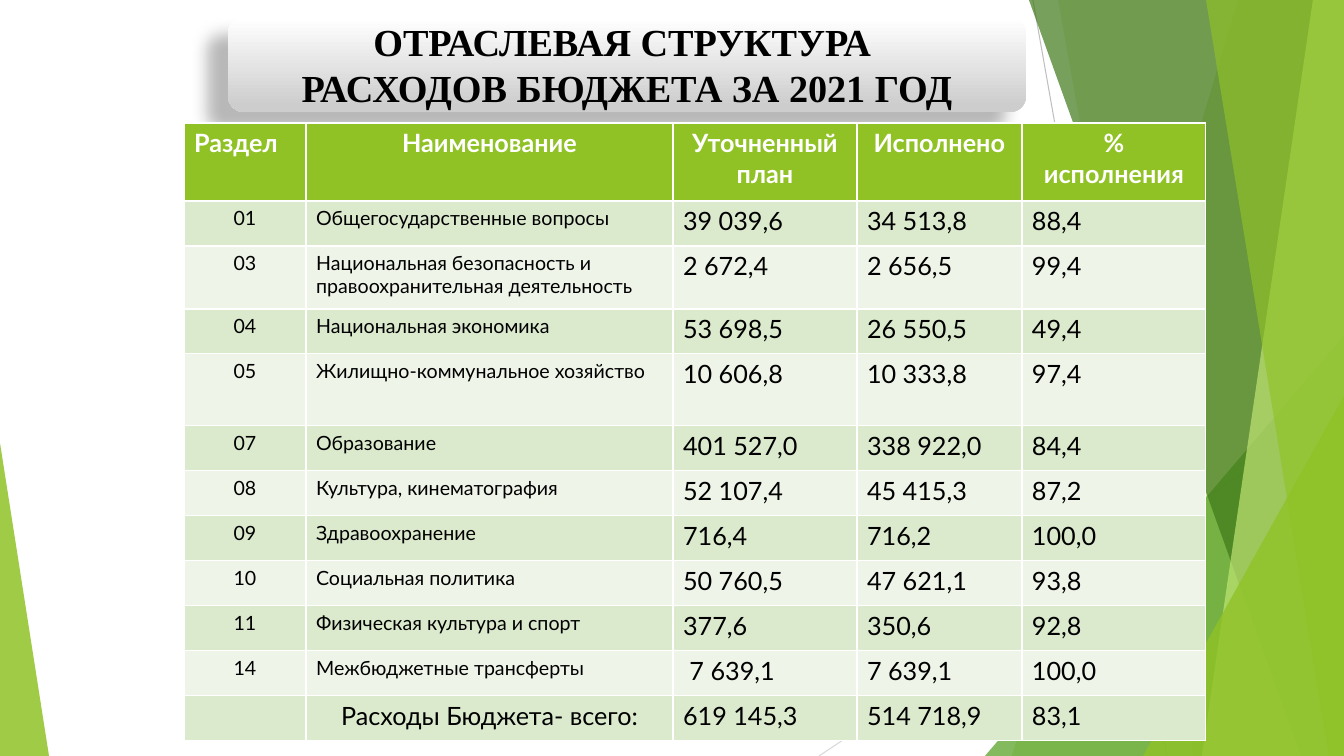
from lxml import etree
from pptx import Presentation
from pptx.dml.color import RGBColor
from pptx.enum.shapes import MSO_CONNECTOR, MSO_SHAPE
from pptx.enum.text import MSO_ANCHOR, PP_ALIGN
from pptx.oxml import parse_xml
from pptx.oxml.ns import nsdecls, qn
from pptx.util import Pt

PX = 914400 / 100.8


def px(*lengths):
    return [round(length * PX) for length in lengths]


def color(value):
    return RGBColor.from_string(value)


deck = Presentation()
deck.slide_width, deck.slide_height = px(1344, 756)
page = deck.slides.add_slide(deck.slide_layouts[6])

for ends, tint in [((1033, 0, 1167, 756), "BFBFBF"), ((1344, 406, 819, 756), "D9D9D9")]:
    line = page.shapes.add_connector(MSO_CONNECTOR.STRAIGHT, *px(*ends))
    line.line.color.rgb = color(tint)
    line.line.width = Pt(0.75)
    etree.SubElement(line._element.spPr, qn("a:effectLst"))

bands = [
    ("band", (1238, 1344, 1012), "90C226", 30),
    ("band", (1058, 1344, 1193), "90C226", 20),
    ("triangle", (985, 336, 359, 420, 1), "54A021", 72),
    ("band", (1029, 1344, 1301), "3F7819", 70),
    ("band", (1313, 1344, 1202), "C0E474", 70),
    ("band", (1206, 1344, 1329), "90C226", 65),
    ("triangle", (1143, 396, 201, 360, 1), "90C226", 80),
    ("triangle", (0, 443, 49, 313, 0), "90C226", 85),
]
for kind, place, tint, opacity in bands:
    if kind == "band":
        top_left, right, bottom_left = place
        outline = page.shapes.build_freeform(top_left, 0, scale=PX)
        outline.add_line_segments([(right, 0), (right, 756), (bottom_left, 756)])
        facet = outline.convert_to_shape()
    else:
        facet = page.shapes.add_shape(MSO_SHAPE.ISOSCELES_TRIANGLE, *px(*place[:4]))
        facet.adjustments[0] = place[4]
    facet.shadow.inherit = False
    facet.line.fill.background()
    facet.fill.solid()
    facet.fill.fore_color.rgb = color(tint)
    tone = facet.fill._xPr.find(qn("a:solidFill"))[0]
    etree.SubElement(tone, qn("a:alpha"), val=str(opacity * 1000))

title = page.shapes.add_shape(MSO_SHAPE.ROUNDED_RECTANGLE, *px(228, 17, 798, 95))
title.line.fill.background()
title.fill.gradient()
title.fill.gradient_angle = 270
for stop, (position, tint) in zip(title.fill.gradient_stops, [(0, "FFFFFF"), (0.94, "CDCDCD")]):
    stop.position = position
    stop.color.rgb = color(tint)
title._element.spPr.append(parse_xml(
    f'<a:effectLst {nsdecls("a")}><a:outerShdw blurRad="{Pt(11.8)}" dist="{Pt(19.7)}" '
    f'dir="{141 * 60000}" algn="ctr" rotWithShape="0"><a:srgbClr val="000000">'
    '<a:alpha val="28000"/></a:srgbClr></a:outerShdw></a:effectLst>'))
frame = title.text_frame
side = px(5)[0]
frame_format = {"word_wrap": True, "vertical_anchor": MSO_ANCHOR.MIDDLE, "margin_left": side,
                "margin_right": side, "margin_top": 0, "margin_bottom": 0}
for name, value in frame_format.items():
    setattr(frame, name, value)
para = frame.paragraphs[0]
para.text = "ОТРАСЛЕВАЯ СТРУКТУРА \vРАСХОДОВ БЮДЖЕТА ЗА 2021 ГОД"
para.alignment = PP_ALIGN.CENTER
for span in para.runs:
    for name, value in {"name": "Times New Roman", "size": Pt(27.3), "bold": True}.items():
        setattr(span.font, name, value)
    span.font.color.rgb = color("000000")

rows = [
    ("Раздел", "Наименование", "Уточненный план", "Исполнено", "% исполнения"),
    ("01", "Общегосударственные вопросы", "39 039,6", "34 513,8", "88,4"),
    ("03", "Национальная безопасность и правоохранительная деятельность",
     "2 672,4", "2 656,5", "99,4"),
    ("04", "Национальная экономика", "53 698,5", "26 550,5", "49,4"),
    ("05", "Жилищно-коммунальное хозяйство", "10 606,8", "10 333,8", "97,4"),
    ("07", "Образование", "401 527,0", "338 922,0", "84,4"),
    ("08", "Культура, кинематография", "52 107,4", "45 415,3", "87,2"),
    ("09", "Здравоохранение", "716,4", "716,2", "100,0"),
    ("10", "Социальная политика", "50 760,5", "47 621,1", "93,8"),
    ("11", "Физическая культура и спорт", "377,6", "350,6", "92,8"),
    ("14", "Межбюджетные трансферты", " 7 639,1", "7 639,1", "100,0"),
    ("", "Расходы Бюджета- всего:", "619 145,3", "514 718,9", "83,1"),
]
widths = [122, 367, 184, 165, 184]
heights = [78, 45, 63, 45, 72] + [45] * 7
last = len(rows) - 1
budget = page.shapes.add_table(
    len(rows), len(widths), *px(184, 123, sum(widths), sum(heights))).table
for column, width in zip(budget.columns, px(*widths)):
    column.width = width
for row, height in zip(budget.rows, px(*heights)):
    row.height = height

for r, row in enumerate(rows):
    header = r == 0
    for c, text in enumerate(row):
        cell = budget.cell(r, c)
        cell.fill.solid()
        cell.fill.fore_color.rgb = color("90C226" if header else ("EEF4E8", "DBE9CD")[r % 2])
        if not text:
            continue
        para = cell.text_frame.paragraphs[0]
        centered = c > 0 if header else c == 0 or (r == last and c == 1)
        para.alignment = PP_ALIGN.CENTER if centered else PP_ALIGN.LEFT
        span = para.add_run()
        span.text = text
        size = 14 if 0 < r < last and c < 2 else 18
        for name, value in {"name": "Lato", "size": Pt(size), "bold": header}.items():
            setattr(span.font, name, value)
        span.font.color.rgb = color("FFFFFF" if header else "000000")

deck.save("out.pptx")
